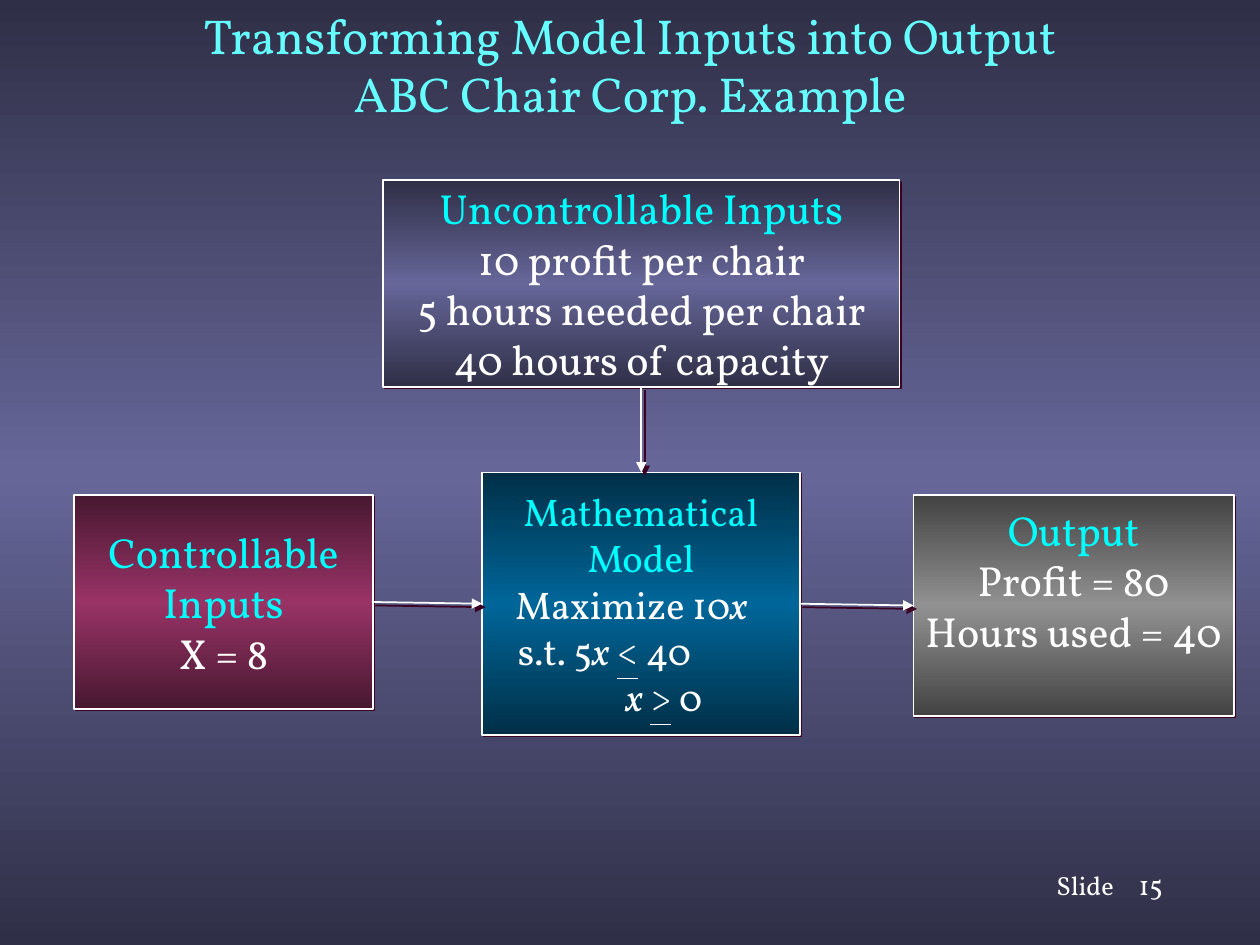
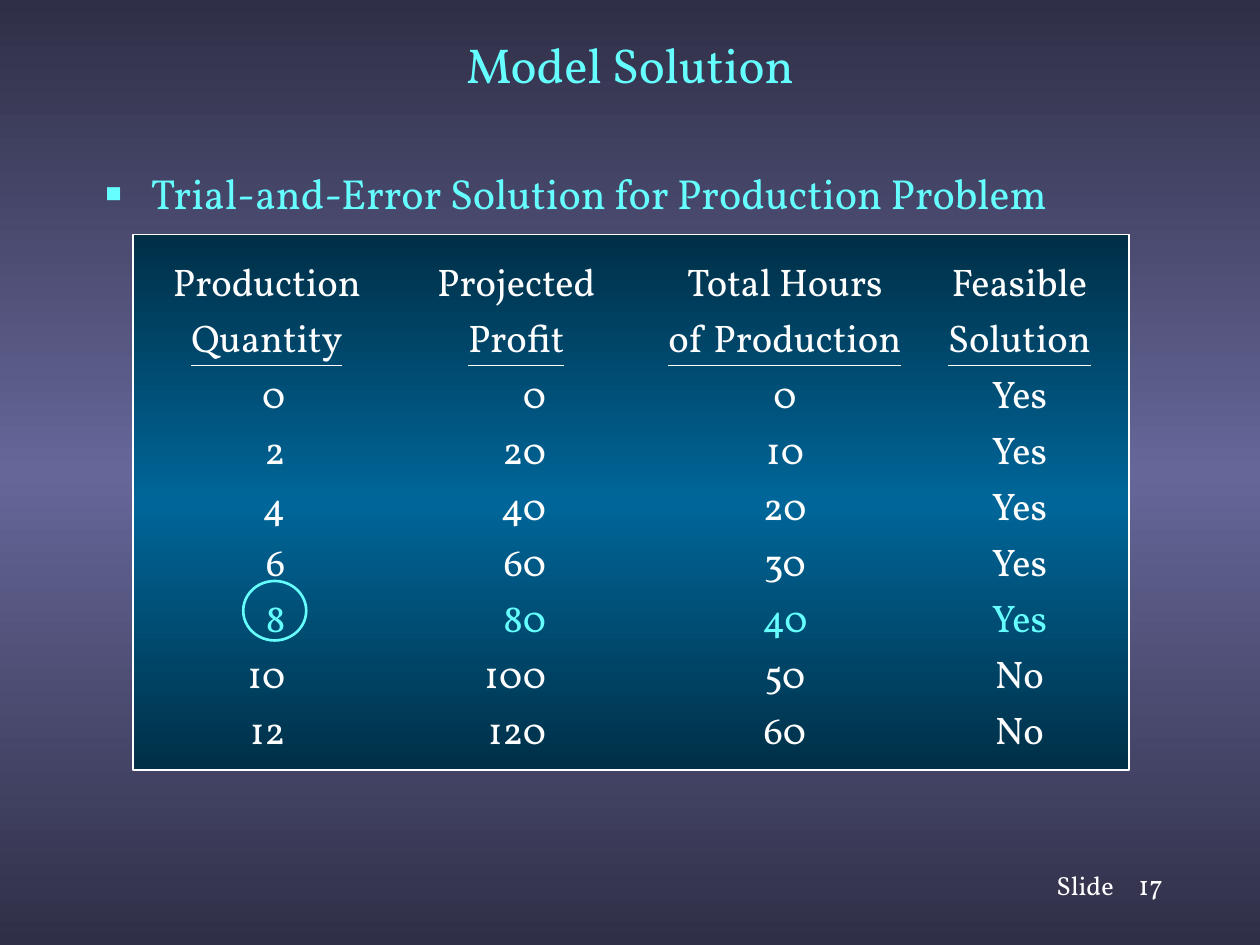
from copy import deepcopy
from dataclasses import dataclass

from lxml import etree
from pptx import Presentation
from pptx.dml.color import RGBColor
from pptx.enum import shapes, text
from pptx.oxml.ns import qn
from pptx.util import Pt

FONT = "Vollkorn"
WHITE = RGBColor(0xFF, 0xFF, 0xFF)
AQUA = RGBColor(0x66, 0xFF, 0xFF)
CYAN = RGBColor(0x00, 0xFF, 0xFF)
SHADOW = RGBColor(0x3C, 0x00, 0x23)
BLACK = RGBColor(0x00, 0x00, 0x00)
NIGHT = RGBColor(0x2F, 0x2F, 0x47)
VIOLET = RGBColor(0x66, 0x66, 0x99)
DARK_PLUM = RGBColor(0x47, 0x18, 0x30)
PLUM = RGBColor(0x99, 0x33, 0x66)
DARK_GREY = RGBColor(0x43, 0x43, 0x43)
GREY = RGBColor(0x91, 0x91, 0x91)
DARK_TEAL = RGBColor(0x00, 0x2F, 0x47)
TEAL = RGBColor(0x00, 0x66, 0x99)
PLAIN_TABLE_STYLE = "{2D5ABB26-0587-4C30-8999-92F81FD0307C}"


@dataclass(frozen=True)
class Term:
    words: str
    italic: bool = False
    underline: bool = False


@dataclass(frozen=True)
class Line:
    terms: tuple[Term, ...]
    color: RGBColor = WHITE
    indent: float | None = None


@dataclass(frozen=True)
class Stage:
    left: float
    top: float
    width: float
    height: float
    edge: RGBColor
    middle: RGBColor
    lines: tuple[Line, ...]
    size: float = 24
    space_below: float = 0


@dataclass(frozen=True)
class Arrow:
    x1: float
    y1: float
    x2: float
    y2: float


@dataclass(frozen=True)
class Column:
    width: float
    header: tuple[str, str]
    values: tuple[str, ...]
    right_margin: float | None = None


def heading(words: str) -> Line:
    return Line((Term(words),), CYAN)


def fact(words: str) -> Line:
    return Line((Term(words),))


STAGES = (
    Stage(219, 103, 295, 118, NIGHT, VIOLET,
          (heading("Uncontrollable Inputs"), fact("10 profit per chair"),
           fact("5 hours needed per chair"), fact("40 hours of capacity"))),
    Stage(42.5, 283, 170.5, 122, DARK_PLUM, PLUM,
          (heading("Controllable"), heading("Inputs"), fact("X = 8"))),
    Stage(522, 283, 183, 126, DARK_GREY, GREY,
          (heading("Output"), fact("Profit = 80"), fact("Hours used = 40")),
          space_below=29),
    Stage(275.5, 270, 181.5, 150, DARK_TEAL, TEAL,
          (heading("Mathematical"), heading("Model"),
           Line((Term("Maximize 10"), Term("x", italic=True)), indent=19),
           Line((Term("s.t. 5"), Term("x ", italic=True),
                 Term("<", underline=True), Term(" 40")), indent=20.5),
           Line((Term("x ", italic=True), Term(">", underline=True),
                 Term(" 0")), indent=82)),
          size=22),
)
ARROWS = (
    Arrow(366.5, 221, 366.5, 270),
    Arrow(212.5, 344, 275.5, 345),
    Arrow(456.5, 345, 522, 346),
)
COLUMNS = (
    Column(141, ("Production", "Quantity"),
           ("0", "2", "4", "6", "8", "10", "12"), 60),
    Column(144, ("Projected", "Profit"),
           ("0", "20", "40", "60", "80", "100", "120"), 55),
    Column(163, ("Total Hours", "of Production"),
           ("0", "10", "20", "30", "40", "50", "60")),
    Column(105, ("Feasible", "Solution"),
           ("Yes", "Yes", "Yes", "Yes", "Yes", "No", "No")),
)
BEST_ROW = 6
ROW_HEIGHT = 32


def place(shape, left: float, top: float, width: float, height: float) -> None:
    shape.left, shape.top = Pt(left), Pt(top)
    shape.width, shape.height = Pt(width), Pt(height)


def style_font(font, size: float, color: RGBColor) -> None:
    font.name = FONT
    font.size = Pt(size)
    font.color.rgb = color


def style_paragraph(paragraph, size: float, color: RGBColor, align) -> None:
    paragraph.alignment = align
    paragraph.space_before = Pt(0)
    for run in paragraph.runs:
        style_font(run.font, size, color)


def set_gradient(owner, fill, edge: RGBColor, middle: RGBColor) -> None:
    fill.gradient()
    fill.gradient_angle = 90
    stop_list = next(owner.element.iter(qn("a:gsLst")))
    stop_list.append(deepcopy(stop_list[-1]))
    for stop, position, color in zip(fill.gradient_stops, (0, 0.5, 1),
                                     (edge, middle, edge)):
        stop.position = position
        stop.color.rgb = color


def add_shadow(effects, distance: float, color: RGBColor) -> None:
    outer = etree.SubElement(effects, qn("a:outerShdw"),
                             dist=str(Pt(distance)), dir="2700000", algn="ctr")
    etree.SubElement(outer, qn("a:srgbClr"), val=str(color))


def cast_shadow(shape, distance: float) -> None:
    properties = shape.element.spPr
    effects = properties.find(qn("a:effectLst"))
    if effects is None:
        effects = etree.SubElement(properties, qn("a:effectLst"))
    add_shadow(effects, distance, SHADOW)


def outline(shape, color: RGBColor, width: float) -> None:
    shape.line.color.rgb = color
    shape.line.width = Pt(width)


def add_panel(slide, left: float, top: float, width: float, height: float,
              edge: RGBColor, middle: RGBColor):
    panel = slide.shapes.add_shape(shapes.MSO_SHAPE.RECTANGLE, Pt(left),
                                   Pt(top), Pt(width), Pt(height))
    panel.shadow.inherit = False
    set_gradient(panel, panel.fill, edge, middle)
    outline(panel, WHITE, 1)
    return panel


def add_stage(slide, stage: Stage) -> None:
    box = add_panel(slide, stage.left, stage.top, stage.width, stage.height,
                    stage.edge, stage.middle)
    cast_shadow(box, 1.4)
    frame = box.text_frame
    frame.word_wrap = True
    frame.vertical_anchor = text.MSO_ANCHOR.MIDDLE
    frame.margin_left = frame.margin_right = frame.margin_top = Pt(0)
    frame.margin_bottom = Pt(stage.space_below)
    for index, line in enumerate(stage.lines):
        paragraph = frame.add_paragraph() if index else frame.paragraphs[0]
        for term in line.terms:
            run = paragraph.add_run()
            run.text = term.words
            run.font.italic = term.italic
            run.font.underline = term.underline
        centred = line.indent is None
        style_paragraph(paragraph, stage.size, line.color,
                        text.PP_ALIGN.CENTER if centred else text.PP_ALIGN.LEFT)
        if not centred:
            paragraph._p.get_or_add_pPr().set("marL", str(Pt(line.indent)))


def add_arrow(slide, arrow: Arrow) -> None:
    link = slide.shapes.add_connector(
        shapes.MSO_CONNECTOR.STRAIGHT, Pt(arrow.x1), Pt(arrow.y1),
        Pt(arrow.x2), Pt(arrow.y2))
    outline(link, WHITE, 1)
    etree.SubElement(link.element.spPr.find(qn("a:ln")), qn("a:tailEnd"),
                     type="triangle")
    cast_shadow(link, 2.8)


def add_label(slide, words: str, left: float, width: float, size: float, align):
    label = slide.shapes.add_textbox(Pt(left), Pt(492), Pt(width), Pt(27))
    frame = label.text_frame
    frame.word_wrap = True
    frame.vertical_anchor = text.MSO_ANCHOR.MIDDLE
    frame.text = words
    style_paragraph(frame.paragraphs[0], size, WHITE, align)
    return label


def add_slide(deck, layout: int, title: str, number: int):
    slide = deck.slides.add_slide(deck.slide_layouts[layout])
    place(slide.shapes.title, 54, 4.5, 612, 64)
    frame = slide.shapes.title.text_frame
    frame.text = title
    frame.auto_size = text.MSO_AUTO_SIZE.NONE
    frame.vertical_anchor = text.MSO_ANCHOR.MIDDLE
    style_paragraph(frame.paragraphs[0], 28, AQUA, text.PP_ALIGN.CENTER)
    footer = add_label(slide, "Slide", 596.5, 60, 15, text.PP_ALIGN.LEFT)
    color_fill = next(footer.element.iter(qn("a:rPr"))).find(qn("a:solidFill"))
    effects = etree.Element(qn("a:effectLst"))
    add_shadow(effects, 1.4, BLACK)
    color_fill.addnext(effects)
    add_label(slide, str(number), 633, 49, 16, text.PP_ALIGN.CENTER)
    return slide


def add_bullet(slide, words: str) -> None:
    body = slide.placeholders[1]
    place(body, 52.5, 92, 580, 36)
    frame = body.text_frame
    frame.text = words
    frame.auto_size = text.MSO_AUTO_SIZE.NONE
    frame.vertical_anchor = text.MSO_ANCHOR.MIDDLE
    paragraph = frame.paragraphs[0]
    style_paragraph(paragraph, 24, AQUA, text.PP_ALIGN.LEFT)
    properties = paragraph._p.get_or_add_pPr()
    properties.set("marL", str(Pt(26.5)))
    properties.set("indent", str(-Pt(26.5)))
    etree.SubElement(properties, qn("a:buSzPct"), val="125000")
    etree.SubElement(properties, qn("a:buChar"), char="▪")


def add_trials(slide) -> None:
    rows = 2 + len(COLUMNS[0].values)
    table = slide.shapes.add_table(
        rows, len(COLUMNS), Pt(82), Pt(143.5),
        Pt(sum(column.width for column in COLUMNS)),
        Pt(rows * ROW_HEIGHT)).table
    table.first_row = table.horz_banding = False
    next(table._tbl.iter(qn("a:tableStyleId"))).text = PLAIN_TABLE_STYLE
    for row in table.rows:
        row.height = Pt(ROW_HEIGHT)
    for x, column in enumerate(COLUMNS):
        table.columns[x].width = Pt(column.width)
        for y, words in enumerate(column.header + column.values):
            cell = table.cell(y, x)
            cell.fill.background()
            cell.margin_top, cell.margin_bottom = Pt(5), Pt(2)
            cell.text = words
            align = text.PP_ALIGN.CENTER
            if y > 1 and column.right_margin is not None:
                align = text.PP_ALIGN.RIGHT
                cell.margin_right = Pt(column.right_margin)
            paragraph = cell.text_frame.paragraphs[0]
            style_paragraph(paragraph, 22, AQUA if y == BEST_ROW else WHITE,
                            align)
            paragraph.line_spacing = 0.9
            paragraph.runs[0].font.underline = y == 1


def build_inputs_slide(deck) -> None:
    slide = add_slide(
        deck, 5,
        "Transforming Model Inputs into Output\vABC Chair Corp. Example", 15)
    for stage in STAGES:
        add_stage(slide, stage)
    for arrow in ARROWS:
        add_arrow(slide, arrow)


def build_solution_slide(deck) -> None:
    slide = add_slide(deck, 1, "Model Solution", 17)
    add_bullet(slide, "Trial-and-Error Solution for Production Problem")
    add_panel(slide, 76, 134, 569, 306, DARK_TEAL, TEAL)
    add_trials(slide)
    best = slide.shapes.add_shape(shapes.MSO_SHAPE.OVAL, Pt(139), Pt(332),
                                  Pt(36), Pt(34))
    best.shadow.inherit = False
    best.fill.background()
    outline(best, AQUA, 1.5)


def main() -> None:
    deck = Presentation()
    deck.slide_width, deck.slide_height = Pt(720), Pt(540)
    master = deck.slide_master
    set_gradient(master, master.background.fill, NIGHT, VIOLET)
    build_inputs_slide(deck)
    build_solution_slide(deck)
    deck.save("out.pptx")


if __name__ == "__main__":
    main()
